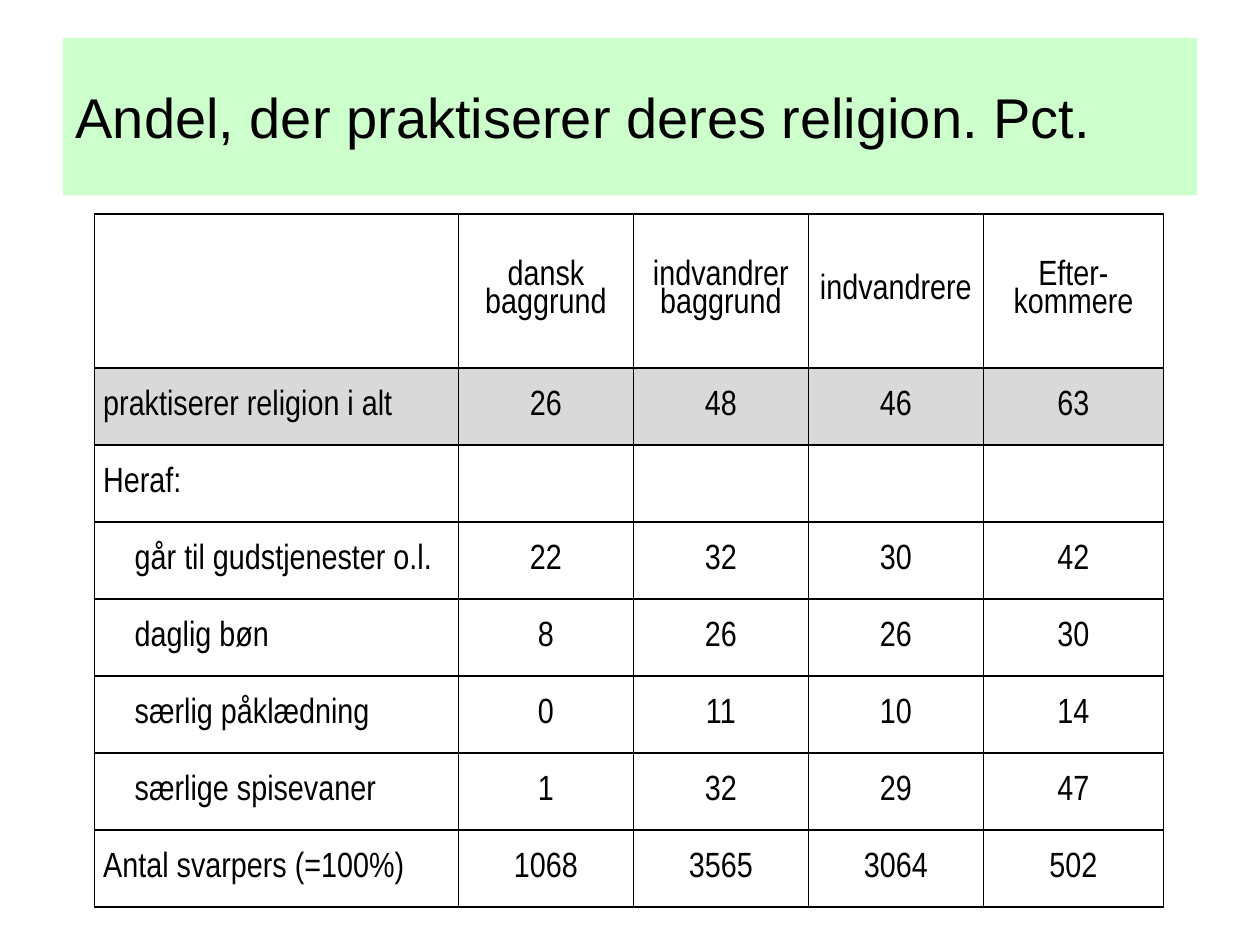
from dataclasses import dataclass

from lxml import etree
from pptx import Presentation
from pptx.dml.color import RGBColor
from pptx.enum import text
from pptx.oxml import ns
from pptx.util import Pt

BLACK, MINT, GREY = "000000", "CCFFCC", "D9D9D9"
COLUMN_WIDTHS = (208, 100, 100, 100, 103)
HEADER_HEIGHT, ROW_HEIGHT = 88, 44
CELL_MARGIN, SUB_INDENT = 5, 18


@dataclass(frozen=True)
class Row:
    label: str
    values: tuple = ("",) * 4
    fill: str | None = None
    indent: float = 0
    height: float = ROW_HEIGHT


ROWS = (
    Row("", ("dansk\nbaggrund", "indvandrer\nbaggrund", "indvandrere", "Efter-kommere"),
        height=HEADER_HEIGHT),
    Row("praktiserer religion i alt", (26, 48, 46, 63), fill=GREY),
    Row("Heraf:"),
    Row("går til gudstjenester o.l.", (22, 32, 30, 42), indent=SUB_INDENT),
    Row("daglig bøn", (8, 26, 26, 30), indent=SUB_INDENT),
    Row("særlig påklædning", (0, 11, 10, 14), indent=SUB_INDENT),
    Row("særlige spisevaner", (1, 32, 29, 47), indent=SUB_INDENT),
    Row("Antal svarpers (=100%)", (1068, 3565, 3064, 502)),
)


def rgb(color: str) -> RGBColor:
    return RGBColor.from_string(color)


def write(tf, content: str, *, font: str, size: float, color: str = BLACK,
          align=text.PP_ALIGN.LEFT, spacing: float = 1.0) -> None:
    """Fill a text frame, one paragraph for each line of content."""
    for i, line in enumerate(content.split("\n")):
        p = tf.paragraphs[0] if i == 0 else tf.add_paragraph()
        p.alignment, p.line_spacing = align, spacing
        r = p.add_run()
        r.text = line
        r.font.name, r.font.size = font, Pt(size)
        r.font.color.rgb = rgb(color)


def add_borders(cell, color: str = BLACK, width: float = 1) -> None:
    tc_pr = cell._tc.get_or_add_tcPr()
    for i, side in enumerate(("lnL", "lnR", "lnT", "lnB")):
        ln = etree.Element(ns.qn(f"a:{side}"), w=str(Pt(width)))
        fill = etree.SubElement(ln, ns.qn("a:solidFill"))
        etree.SubElement(fill, ns.qn("a:srgbClr"), val=color)
        tc_pr.insert(i, ln)  # borders come before the fill


def format_cell(cell, content: str, *, fill: str | None, indent: float, align) -> None:
    cell.vertical_anchor = text.MSO_ANCHOR.MIDDLE
    cell.margin_left, cell.margin_right = Pt(CELL_MARGIN + indent), Pt(CELL_MARGIN)
    cell.margin_top = cell.margin_bottom = Pt(0)
    if fill:
        cell.fill.solid()
        cell.fill.fore_color.rgb = rgb(fill)
    else:
        cell.fill.background()
    add_borders(cell)
    if content:
        write(cell.text_frame, content, font="Arial Narrow", size=20,
              align=align, spacing=0.85)


def add_title(s, content: str) -> None:
    sp = s.shapes.title
    sp.left, sp.top, sp.width, sp.height = Pt(36), Pt(21.6), Pt(648), Pt(90)
    sp.fill.solid()
    sp.fill.fore_color.rgb = rgb(MINT)
    tf = sp.text_frame
    tf.auto_size = text.MSO_AUTO_SIZE.NONE
    tf.vertical_anchor = text.MSO_ANCHOR.MIDDLE
    write(tf, content, font="Arial", size=32)


def add_religion_table(s, rows: tuple[Row, ...]) -> None:
    frame = s.shapes.add_table(len(rows), len(COLUMN_WIDTHS), Pt(54), Pt(122.4),
                               Pt(sum(COLUMN_WIDTHS)), Pt(sum(r.height for r in rows)))
    table = frame.table
    table.first_row = table.horz_banding = False
    for column, width in zip(table.columns, COLUMN_WIDTHS):
        column.width = Pt(width)
    for i, row in enumerate(rows):
        table.rows[i].height = Pt(row.height)
        format_cell(table.cell(i, 0), row.label, fill=row.fill, indent=row.indent,
                    align=text.PP_ALIGN.LEFT)
        for j, value in enumerate(row.values, start=1):
            format_cell(table.cell(i, j), str(value), fill=row.fill, indent=0,
                        align=text.PP_ALIGN.CENTER)


def main() -> None:
    prs = Presentation()
    prs.slide_width, prs.slide_height = Pt(720), Pt(540)
    s = prs.slides.add_slide(prs.slide_layouts.get_by_name("Title Only"))
    add_title(s, "Andel, der praktiserer deres religion. Pct.")
    add_religion_table(s, ROWS)
    prs.save("out.pptx")


if __name__ == "__main__":
    main()
